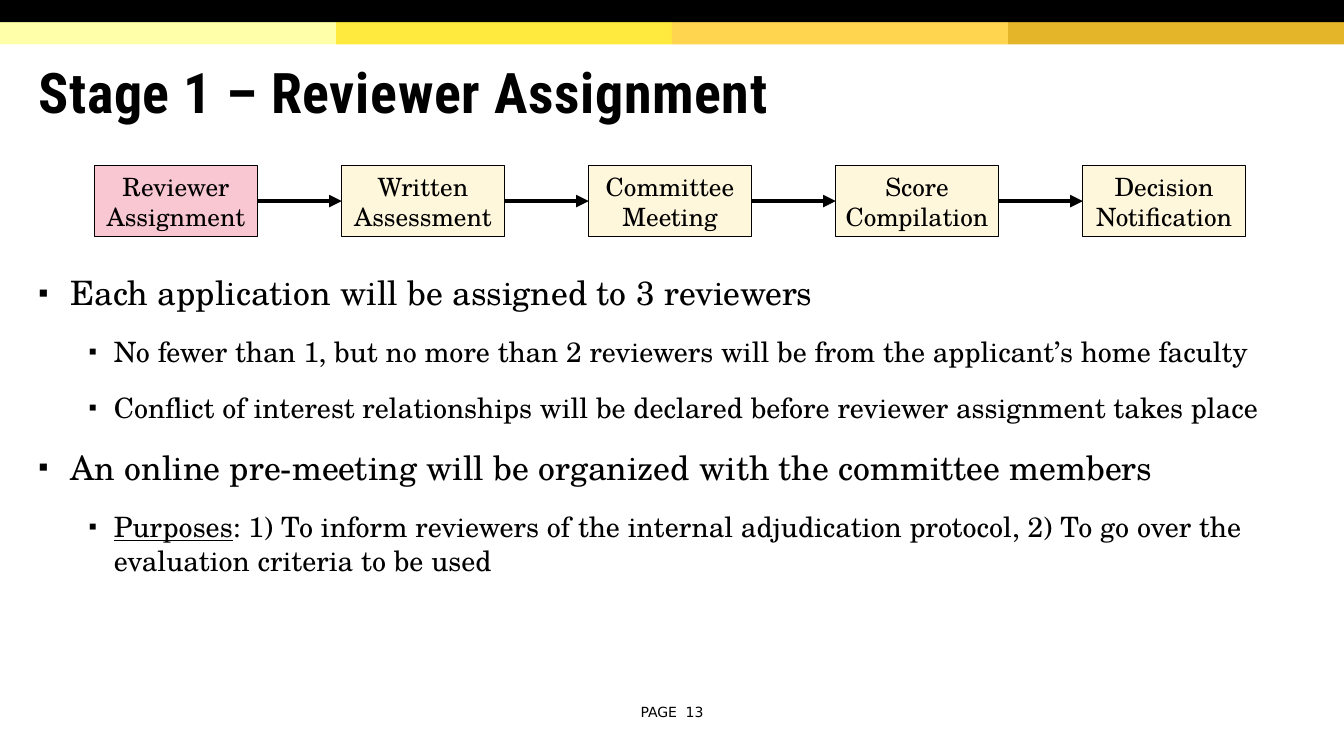
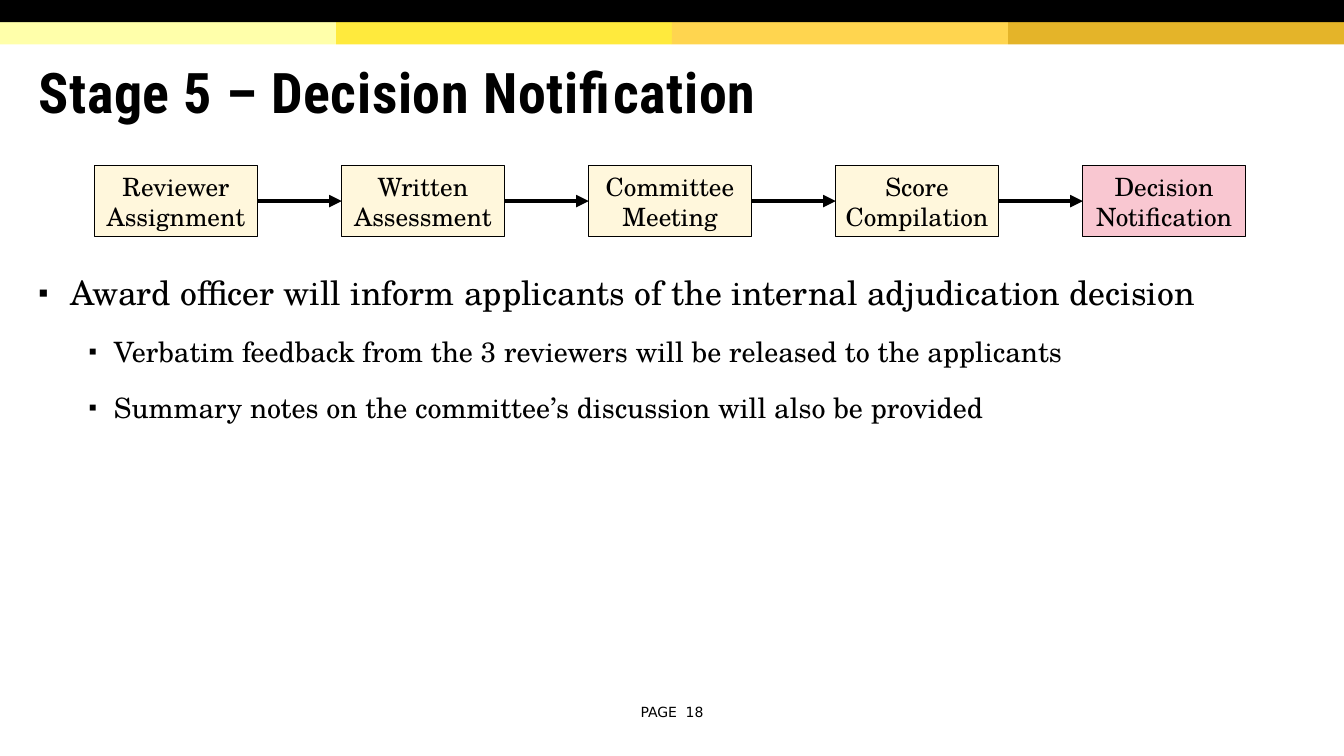
"""Build the review stage slides."""
from dataclasses import dataclass

from lxml.etree import SubElement
from pptx import Presentation
from pptx.dml.color import RGBColor
from pptx.enum.shapes import MSO_CONNECTOR, MSO_SHAPE
from pptx.enum.text import MSO_ANCHOR, MSO_AUTO_SIZE, PP_ALIGN
from pptx.oxml.ns import qn
from pptx.shapes.autoshape import Shape
from pptx.slide import Slide, SlideLayout
from pptx.text.text import TextFrame, _Paragraph as Para, _Run as Run
from pptx.util import Inches, Pt

BLACK, CREAM, PINK = "000000", "FFF7DC", "F9C7D1"
HEAD, SERIF, SANS = "Roboto Condensed", "TeX Gyre Schola", "DejaVu Sans"
WIDE, BAND = 13.33, 0.22
HUES = ("FFFFAA", "FFEA3D", "FFD54F", "E4B429")
STEPS = ("Reviewer Assignment", "Written Assessment", "Committee Meeting",
         "Score Compilation", "Decision Notification")
STEP_X, STEP_Y, STEP_W, STEP_H, PITCH = 0.94, 1.64, 1.61, 0.71, 2.45


@dataclass(frozen=True)
class Level:
    """Indent and text size of a list level."""
    left: float
    hang: float
    size: int


@dataclass(frozen=True)
class Item:
    """One list entry, with an optional underlined lead."""
    level: int
    text: str
    lead: str = ""


@dataclass(frozen=True)
class Page:
    """Content of one stage slide."""
    stage: int
    number: int
    items: tuple[Item, ...]


LEVELS = (Level(0.32, 0.32, 24), Level(0.75, 0.25, 20))
PAGES = (
    Page(1, 13, (
        Item(0, "Each application will be assigned to 3 reviewers"),
        Item(1, "No fewer than 1, but no more than 2 reviewers will be from "
                "the applicant’s home faculty"),
        Item(1, "Conflict of interest relationships will be declared before "
                "reviewer assignment takes place"),
        Item(0, "An online pre-meeting will be organized with the committee "
                "members"),
        Item(1, ": 1) To inform reviewers of the internal adjudication "
                "protocol, 2) To go over the evaluation criteria to be used",
             "Purposes"),
    )),
    Page(5, 18, (
        Item(0, "Award officer will inform applicants of the internal "
                "adjudication decision"),
        Item(1, "Verbatim feedback from the 3 reviewers will be released to "
                "the applicants"),
        Item(1, "Summary notes on the committee’s discussion will also be "
                "provided"),
    )),
)


def shade(code: str) -> RGBColor:
    """Turn a hex string into a colour."""
    return RGBColor.from_string(code)


def write(para: Para, text: str, face: str, size: int, track: int = 0) -> Run:
    """Add one run, tracked in hundredths of a point."""
    run = para.add_run()
    run.text = text
    run.font.name, run.font.size = face, Pt(size)
    run.font.color.rgb = shade(BLACK)
    if track:
        run.font._element.set("spc", str(track))
    return run


def place(shape: Shape, x: float, y: float, w: float, h: float) -> TextFrame:
    """Move a shape and return its wrapped text frame."""
    shape.left, shape.top = Inches(x), Inches(y)
    shape.width, shape.height = Inches(w), Inches(h)
    frame = shape.text_frame
    frame.word_wrap, frame.auto_size = True, MSO_AUTO_SIZE.NONE
    return frame


def block(slide: Slide, x: float, y: float, w: float, h: float,
          fill: str) -> Shape:
    """Draw a plain filled rectangle."""
    shape = slide.shapes.add_shape(MSO_SHAPE.RECTANGLE, Inches(x), Inches(y),
                                   Inches(w), Inches(h))
    shape.shadow.inherit = False
    shape.fill.solid()
    shape.fill.fore_color.rgb = shade(fill)
    shape.line.fill.background()
    return shape


def add_bands(slide: Slide, layout: SlideLayout) -> None:
    """Draw the top bands and hand them to the shared layout."""
    part = WIDE / len(HUES)
    bands = [block(slide, i * part, BAND, part, BAND, hue)
             for i, hue in enumerate(HUES)]
    bands.append(block(slide, 0, 0, WIDE, BAND, BLACK))
    for i, band in enumerate(bands):
        band.element.nvSpPr.cNvPr.set("id", str(100 + i))
        layout.shapes.element.append(band.element)


def add_title(slide: Slide, text: str) -> None:
    """Fill the title placeholder."""
    frame = place(slide.shapes.title, 0.28, 0.47, 12.65, 0.98)
    frame.vertical_anchor = MSO_ANCHOR.MIDDLE
    para = frame.paragraphs[0]
    para.alignment, para.line_spacing = PP_ALIGN.LEFT, 0.85
    write(para, text, HEAD, 40, 50).font.bold = True


def add_foot(slide: Slide, number: int) -> None:
    """Add the page number."""
    box = slide.shapes.add_textbox(0, 0, 0, 0)
    frame = place(box, 6.11, 6.93, 1.11, 0.27)
    frame.vertical_anchor = MSO_ANCHOR.MIDDLE
    para = frame.paragraphs[0]
    para.alignment = PP_ALIGN.CENTER
    write(para, "PAGE", SANS, 10)
    write(para, " ", SANS, 10, 300)
    write(para, str(number), SANS, 10)


def add_step(slide: Slide, x: float, text: str, fill: str) -> Shape:
    """Draw one step of the flow."""
    step = block(slide, x, STEP_Y, STEP_W, STEP_H, fill)
    step.line.color.rgb, step.line.width = shade(BLACK), Pt(0.75)
    frame = step.text_frame
    frame.word_wrap, frame.auto_size = True, MSO_AUTO_SIZE.SHAPE_TO_FIT_TEXT
    frame.margin_left = frame.margin_right = Inches(0.05)
    para = frame.paragraphs[0]
    para.alignment = PP_ALIGN.CENTER
    write(para, text, SERIF, 18)
    return step


def join(slide: Slide, start: Shape, end: Shape) -> None:
    """Link two steps with an arrow."""
    link = slide.shapes.add_connector(MSO_CONNECTOR.STRAIGHT, 0, 0, 0, 0)
    link.begin_connect(start, 3)
    link.end_connect(end, 1)
    link.line.color.rgb, link.line.width = shade(BLACK), Pt(3)
    SubElement(link.line._get_or_add_ln(), qn("a:tailEnd"), type="triangle")
    SubElement(link.element.spPr, qn("a:effectLst"))


def add_flow(slide: Slide, stage: int) -> None:
    """Draw all steps with the current one marked."""
    steps = [add_step(slide, STEP_X + i * PITCH, text,
                      PINK if i + 1 == stage else CREAM)
             for i, text in enumerate(STEPS)]
    for start, end in zip(steps, steps[1:]):
        join(slide, start, end)


def bullet(para: Para, level: Level) -> None:
    """Set the indent and square bullet of a list entry."""
    props = para._p.get_or_add_pPr()
    props.set("marL", str(Inches(level.left)))
    props.set("indent", str(-Inches(level.hang)))
    hue = SubElement(props, qn("a:buClr"))
    SubElement(hue, qn("a:srgbClr"), val=BLACK)
    SubElement(props, qn("a:buSzPct"), val="85000")
    SubElement(props, qn("a:buChar"), char="▪")


def add_list(slide: Slide, items: tuple[Item, ...]) -> None:
    """Fill the body placeholder."""
    frame = place(slide.placeholders[1], 0.28, 2.65, 12.65, 3.92)
    for i, item in enumerate(items):
        para = frame.add_paragraph() if i else frame.paragraphs[0]
        level = LEVELS[item.level]
        para.level = item.level
        bullet(para, level)
        para.space_before, para.space_after = Pt(8 if i else 0), Pt(8)
        if item.lead:
            write(para, item.lead, SERIF, level.size).font.underline = True
        write(para, item.text, SERIF, level.size)


def main() -> None:
    """Build and save the deck."""
    deck = Presentation()
    deck.slide_width, deck.slide_height = Inches(WIDE), Inches(7.5)
    layout = deck.slide_layouts[1]
    for i, page in enumerate(PAGES):
        slide = deck.slides.add_slide(layout)
        if i == 0:
            add_bands(slide, layout)
        add_title(slide, f"Stage {page.stage} – {STEPS[page.stage - 1]}")
        add_foot(slide, page.number)
        add_flow(slide, page.stage)
        add_list(slide, page.items)
    deck.save("out.pptx")


if __name__ == "__main__":
    main()
